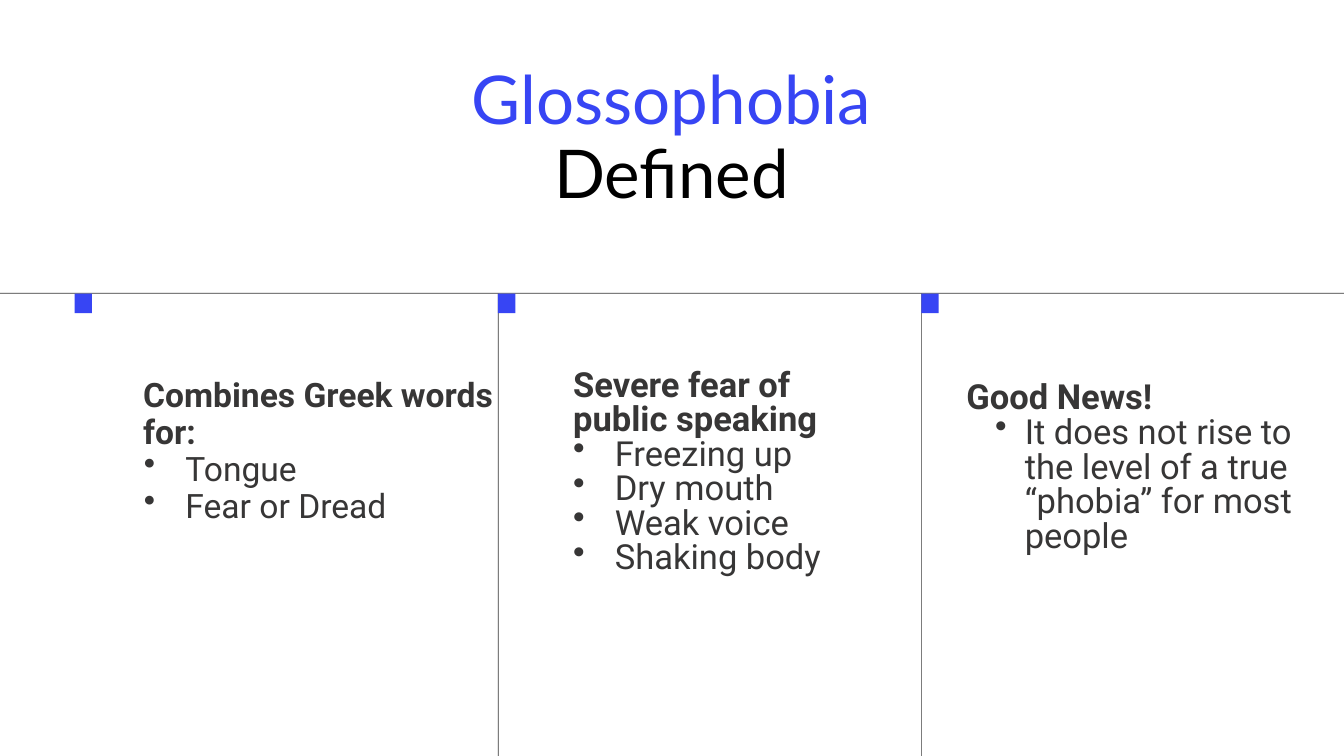
"""Build a three-column slide that defines glossophobia."""
from dataclasses import dataclass

from lxml import etree
from pptx import Presentation
from pptx.dml.color import RGBColor
from pptx.enum.shapes import MSO_SHAPE
from pptx.enum.text import MSO_ANCHOR, MSO_AUTO_SIZE, PP_ALIGN
from pptx.oxml.ns import qn
from pptx.util import Inches, Pt

RECTANGLE = MSO_SHAPE.RECTANGLE
TOP = MSO_ANCHOR.TOP
FIT_SHAPE = MSO_AUTO_SIZE.SHAPE_TO_FIT_TEXT
CENTER, LEFT = PP_ALIGN.CENTER, PP_ALIGN.LEFT
TITLE_ONLY = 5


@dataclass(frozen=True)
class Theme:
    """Colours, fonts and type sizes."""
    accent: str = "3745F4"
    ink: str = "373636"
    black: str = "000000"
    title_font: str = "Lato"
    body_font: str = "Roboto"
    title_size: float = 72
    title_leading: float = 79.2


THEME = Theme()
WIDTH, HEIGHT = 20, 11.25
GRID_LEFT, GRID_TOP, COLUMN = 1.11, 4.37, 6.3
RULE = 0.01
MARKER_WIDTH, MARKER_HEIGHT = 0.26, 0.29

COLUMNS = [
    dict(box=(1.71, 5.61, 5.68, 2.8), size=36, leading=39.6,
         heading="Combines Greek words for:", heading_margin=0.42,
         bullets=["Tongue", "Fear or Dread"], margin=1.05, hanging=0.62,
         heading_level=1, bullet_level=1),
    dict(box=(8.53, 5.5, 4.01, 3.63), size=37, leading=37,
         heading="Severe fear of public speaking", heading_margin=0,
         bullets=["Freezing up", "Dry mouth", "Weak voice", "Shaking body"],
         margin=0.62, hanging=0.62, heading_level=0, bullet_level=0),
    dict(box=(14.38, 5.69, 4.98, 2.59), size=37, leading=37,
         heading="Good News!", heading_margin=0,
         bullets=["It does not rise to the level of a true “phobia” for most people"],
         margin=0.87, hanging=0.44, heading_level=0, bullet_level=1),
]


def add_block(slide, left, top, width, height, color):
    """Add a plain filled rectangle."""
    shape = slide.shapes.add_shape(RECTANGLE, *map(Inches, (left, top, width, height)))
    shape.shadow.inherit = False
    shape.fill.solid()
    shape.fill.fore_color.rgb = RGBColor.from_string(color)
    shape.line.fill.background()


def prepare_frame(shape):
    """Return the shape's text frame, without insets and with wrapping."""
    frame = shape.text_frame
    frame.margin_left = frame.margin_top = frame.margin_right = frame.margin_bottom = 0
    frame.word_wrap = True
    frame.auto_size = FIT_SHAPE
    frame.vertical_anchor = TOP
    return frame


def add_text(paragraph, text, *, font, size, color, leading, bold=False, align=LEFT):
    """Add a formatted run and set its paragraph's spacing."""
    paragraph.alignment = align
    paragraph.line_spacing = Pt(leading)
    run = paragraph.add_run()
    run.text = text
    run.font.name = font
    run.font.size = Pt(size)
    run.font.bold = bold
    run.font.color.rgb = RGBColor.from_string(color)


def set_indent(paragraph, margin, hanging=0, level=0, bullet=False):
    """Set the level, indents and optional bullet of a paragraph."""
    paragraph.level = level
    properties = paragraph._p.get_or_add_pPr()
    properties.set("marL", str(Inches(margin)))
    properties.set("indent", str(-Inches(hanging)))
    if bullet:
        etree.SubElement(properties, qn("a:buChar")).set("char", "•")


def add_title(slide):
    """Place and fill the two-line title."""
    title = slide.shapes.title
    title.left, title.top, title.width, title.height = map(
        Inches, (3.83, 0.96, 12.33, 2.22))
    paragraph = prepare_frame(title).paragraphs[0]
    style = dict(font=THEME.title_font, size=THEME.title_size,
                 leading=THEME.title_leading, align=CENTER)
    add_text(paragraph, "Glossophobia", color=THEME.accent, **style)
    paragraph.add_line_break()
    add_text(paragraph, "Defined", color=THEME.black, **style)


def add_grid(slide):
    """Draw the horizontal rule, column rules and column markers."""
    add_block(slide, 0, GRID_TOP - RULE, WIDTH, RULE, THEME.ink)
    lefts = [GRID_LEFT + index * COLUMN for index in range(len(COLUMNS))]
    for left in lefts[1:]:
        add_block(slide, left, GRID_TOP, RULE, HEIGHT - GRID_TOP, THEME.ink)
    for left in lefts:
        add_block(slide, left, GRID_TOP, MARKER_WIDTH, MARKER_HEIGHT, THEME.accent)


def add_column(slide, column):
    """Add a bold heading with its bullet list."""
    frame = prepare_frame(slide.shapes.add_textbox(*map(Inches, column["box"])))
    style = dict(font=THEME.body_font, size=column["size"],
                 color=THEME.ink, leading=column["leading"])
    heading = frame.paragraphs[0]
    add_text(heading, column["heading"], bold=True, **style)
    set_indent(heading, column["heading_margin"], level=column["heading_level"])
    for text in column["bullets"]:
        paragraph = frame.add_paragraph()
        add_text(paragraph, text, **style)
        set_indent(paragraph, column["margin"], column["hanging"],
                   column["bullet_level"], bullet=True)


def main():
    """Build and save the presentation."""
    presentation = Presentation()
    presentation.slide_width = Inches(WIDTH)
    presentation.slide_height = Inches(HEIGHT)
    slide = presentation.slides.add_slide(presentation.slide_layouts[TITLE_ONLY])
    add_title(slide)
    add_grid(slide)
    for column in COLUMNS:
        add_column(slide, column)
    presentation.save("out.pptx")


if __name__ == "__main__":
    main()
